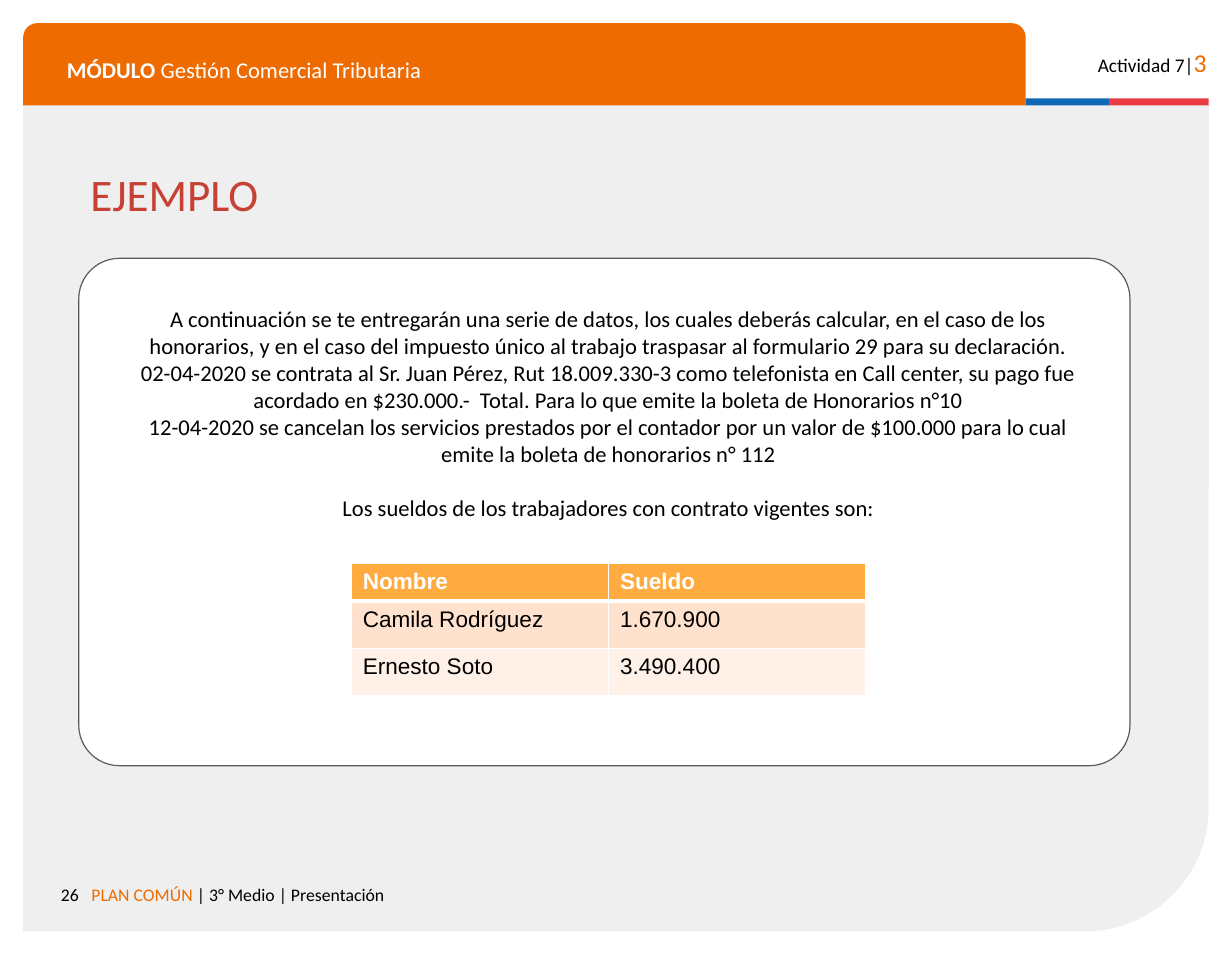
import dataclasses

import pptx
import pptx.dml.color
import pptx.enum.shapes
import pptx.enum.text
import pptx.oxml
import pptx.oxml.ns
import pptx.util

SCALE = 9144  # EMU in one px, at 100 px to the inch
KIND = pptx.enum.shapes.MSO_SHAPE
ALIGN = pptx.enum.text.PP_ALIGN
ANCHOR = pptx.enum.text.MSO_ANCHOR
QN = pptx.oxml.ns.qn


@dataclasses.dataclass(frozen=True)
class Theme:
    sans: str = "Calibri"
    grid: str = "Arial"
    black: str = "000000"
    white: str = "FFFFFF"
    gray: str = "EFEFEF"
    orange: str = "ED6B00"
    blue: str = "0F69B4"
    red: str = "EB3C46"
    title: str = "C64033"
    edge: str = "595959"
    head: str = "FFAB40"
    bands: tuple = ("FFE2CD", "FFF1E8")
    small: int = 11
    label: int = 12
    body: int = 14
    page: int = 16
    large: int = 28


THEME = Theme()
INTRO = (
    "A continuación se te entregarán una serie de datos, los cuales deberás calcular, en el caso de los "
    "honorarios, y en el caso del impuesto único al trabajo traspasar al formulario 29 para su declaración.",
    "02-04-2020 se contrata al Sr. Juan Pérez, Rut 18.009.330-3 como telefonista en Call center, su pago fue "
    "acordado en $230.000.-  Total. Para lo que emite la boleta de Honorarios n°10",
    "12-04-2020 se cancelan los servicios prestados por el contador por un valor de $100.000 para lo cual "
    "emite la boleta de honorarios n° 112",
    "Los sueldos de los trabajadores con contrato vigentes son:",
)
WAGES = (("Nombre", "Sueldo"), ("Camila Rodríguez", "1.670.900"), ("Ernesto Soto", "3.490.400"))


def px(num):
    return pptx.util.Emu(num * SCALE)


def rgb(code):
    return pptx.dml.color.RGBColor.from_string(code)


def apply(item, form):
    for name, value in form.items():
        setattr(item, name, value)


def place(item, box):
    apply(item, dict(zip(("left", "top", "width", "height"), map(px, box))))


def add_run(para, text, size, color, bold=False, face=THEME.sans):
    run = para.add_run()
    run.text = text
    apply(run.font, {"size": pptx.util.Pt(size), "name": face, "bold": bold})
    run.font.color.rgb = rgb(color)


def write(frame, lines, align=ALIGN.LEFT, anchor=ANCHOR.TOP, pad=10, lead=1.0):
    apply(frame, {
        "word_wrap": True, "auto_size": pptx.enum.text.MSO_AUTO_SIZE.NONE, "vertical_anchor": anchor,
        "margin_left": px(10), "margin_right": px(10), "margin_top": px(pad), "margin_bottom": px(pad),
    })
    for index, runs in enumerate(lines):
        para = frame.add_paragraph() if index else frame.paragraphs[0]
        apply(para, {"alignment": align, "line_spacing": lead, "space_before": pptx.util.Pt(0)})
        for run in runs:
            add_run(para, *run)


def add_label(slide, box, runs, align=ALIGN.LEFT):
    label = slide.shapes.add_textbox(*map(px, box))
    write(label.text_frame, [runs], align)


def use_holder(holder, box, lines, **form):
    tree = holder.element.getparent()
    tree.append(holder.element)
    place(holder, box)
    write(holder.text_frame, lines, **form)


def add_block(slide, kind, box, fill, edge=None, adjust=()):
    block = slide.shapes.add_shape(kind, *map(px, box))
    block.shadow.inherit = False
    block.fill.solid()
    block.fill.fore_color.rgb = rgb(fill)
    if edge:
        block.line.color.rgb = rgb(edge)
        block.line.width = pptx.util.Pt(0.75)
    else:
        block.line.fill.background()
    for index, value in enumerate(adjust):
        block.adjustments[index] = value
    return block


def add_edges(cell, base):
    props = cell._tc.get_or_add_tcPr()
    for side in "LRTB":
        width = base if side == "B" else 1
        props.append(pptx.oxml.parse_xml(
            f'<a:ln{side} {pptx.oxml.ns.nsdecls("a")} w="{pptx.util.Pt(width)}"><a:solidFill>'
            f'<a:srgbClr val="{THEME.white}"/></a:solidFill></a:ln{side}>'))


def add_grid(slide, box, rows, heights):
    table = slide.shapes.add_table(len(rows), len(rows[0]), *map(px, box)).table
    for line, height in zip(table.rows, heights):
        line.height = px(height)
    for index, row in enumerate(rows):
        first = index == 0
        fill = THEME.head if first else THEME.bands[(index - 1) % 2]
        color = THEME.white if first else THEME.black
        for col, text in enumerate(row):
            cell = table.cell(index, col)
            add_edges(cell, 3 if first else 1)
            cell.fill.solid()
            cell.fill.fore_color.rgb = rgb(fill)
            apply(cell, {"margin_left": px(10), "margin_right": px(10),
                         "margin_top": px(5), "margin_bottom": px(5)})
            add_run(cell.text_frame.paragraphs[0], text, THEME.body, color, first, THEME.grid)


def add_frame(slide):
    panel = add_block(slide, KIND.ROUND_1_RECTANGLE, (20, 90, 1023, 714), THEME.gray, adjust=(0.15,))
    panel.rotation = 180
    panel.element.spPr.find(QN("a:xfrm")).set("flipH", "1")
    add_block(slide, KIND.ROUND_2_SAME_RECTANGLE, (20, 20, 865, 71), THEME.orange, adjust=(0.17, 0))
    add_block(slide, KIND.RECTANGLE, (885, 85, 72, 6), THEME.blue)
    add_block(slide, KIND.RECTANGLE, (957, 85, 86, 6), THEME.red)
    add_label(slide, (48, 38, 814, 35), [
        ("MÓDULO", THEME.body, THEME.white, True),
        (" Gestión Comercial Tributaria", THEME.body, THEME.white)])
    add_label(slide, (923, 30, 128, 38), [
        ("Actividad 7|", THEME.label, THEME.black), ("3", THEME.page, THEME.orange)], ALIGN.RIGHT)
    add_label(slide, (20, 753, 58, 29), [("26", THEME.small, THEME.black)], ALIGN.RIGHT)
    add_label(slide, (69, 753, 714, 38), [
        ("PLAN COMÚN ", THEME.small, THEME.orange),
        ("| 3° Medio | Presentación", THEME.small, THEME.black)])


def add_intro(holder):
    lines = [[(text, THEME.body, THEME.black)] for text in INTRO]
    use_holder(holder, (98, 258, 854, 199), lines, align=ALIGN.CENTER, pad=5)
    paras = holder.text_frame.paragraphs
    for para in paras:
        props = para._p.get_or_add_pPr()
        apply(props, {})
        for name in ("marL", "indent"):
            props.set(name, "0")
        props.append(pptx.oxml.parse_xml(f'<a:buNone {pptx.oxml.ns.nsdecls("a")}/>'))
    paras[-1].space_before = pptx.util.Pt(17)


def main():
    deck = pptx.Presentation()
    apply(deck, {"slide_width": px(1063), "slide_height": px(827)})
    slide = deck.slides.add_slide(deck.slide_layouts[1])
    title, body = slide.placeholders
    add_frame(slide)
    use_holder(title, (68, 154, 979, 35), [[("EJEMPLO", THEME.large, THEME.title)]],
               anchor=ANCHOR.MIDDLE, lead=0.8)
    add_block(slide, KIND.ROUNDED_RECTANGLE, (68, 223, 907, 438), THEME.white, THEME.edge, (0.08,))
    add_intro(body)
    add_grid(slide, (303, 486, 444, 115), WAGES, (33, 41, 41))
    deck.save("out.pptx")


if __name__ == "__main__":
    main()
